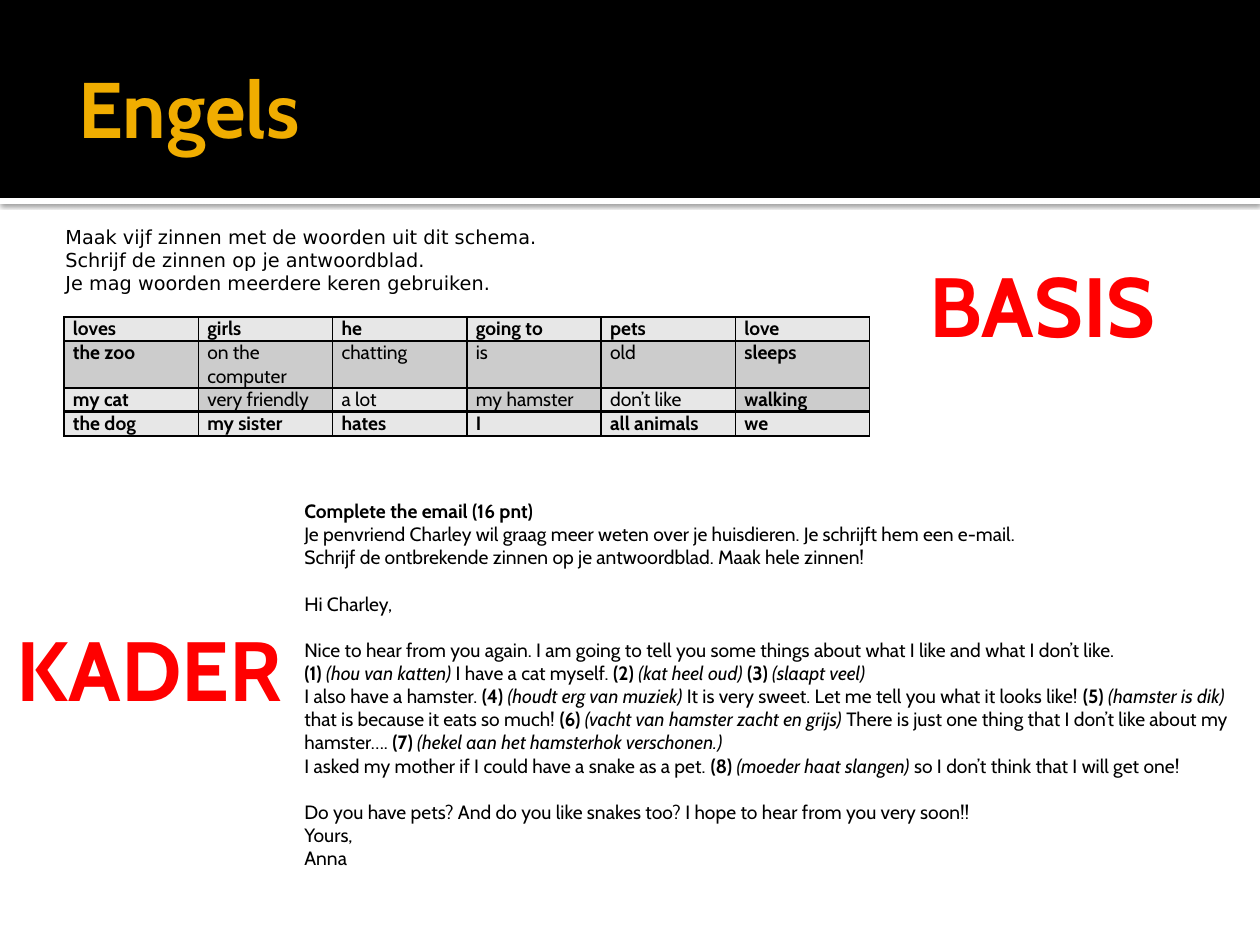
from lxml import etree
from pptx import Presentation
from pptx import util as u
from pptx.dml.color import RGBColor
from pptx.enum import shapes, text
from pptx.oxml import ns

PX_PER_INCH = 126
FONT = "Cabin"
BLACK, WHITE, RED, GOLD = "000000", "FFFFFF", "FF0000", "F0AD00"
LIGHT, DARK = "E7E7E7", "CCCCCC"
BODY_SIZE = 11
BLANK_LINE = 13.3

INSTRUCTIONS = [
    "Maak vijf zinnen met de woorden uit dit schema.",
    "Schrijf de zinnen op je antwoordblad.",
    "Je mag woorden meerdere keren gebruiken.",
]

# *bold* and _italic_ mark the spans
WORDS = [
    ["*loves*", "*girls*", "*he*", "*going to*", "*pets*", "*love*"],
    ["*the zoo*", "on the computer", "chatting", "is", "old", "*sleeps*"],
    ["*my cat*", "very friendly", "a lot", "my hamster", "don’t like", "*walking*"],
    ["*the dog*", "*my sister*", "*hates*", "*I*", "*all animals*", "*we*"],
]
ROW_FILLS = [[LIGHT] * 6, [DARK] * 6, [LIGHT, DARK] * 3, [LIGHT] * 6]
ROW_HEIGHTS = [24, 47, 24, 24]

# Each block of the e-mail is set apart by one blank line
EMAIL = [
    [
        "*Complete the email (16 pnt)*",
        "Je penvriend Charley wil graag meer weten over je huisdieren. "
        "Je schrijft hem een e-mail.",
        "Schrijf de ontbrekende zinnen op je antwoordblad. Maak hele zinnen!",
    ],
    ["Hi Charley,"],
    [
        "Nice to hear from you again. I am going to tell you some things "
        "about what I like and what I don’t like.",
        "*(1)*_ (hou van katten) _I have a cat myself. *(2) *_(kat heel oud) _"
        "*(3)*_ (slaapt veel)_",
        "I also have a hamster. *(4) *_(houdt erg van muziek) _It is very sweet. "
        "Let me tell you what it looks like! *(5) *_(hamster is dik) _"
        "that is because it eats so much! *(6) *_(vacht van hamster zacht en grijs) _"
        "There is just one thing that I don’t like about my hamster…. "
        "*(7) *_(hekel aan het hamsterhok verschonen.)_",
        "I asked my mother if I could have a snake as a pet. "
        "*(8)*_ (moeder haat slangen) _so I don’t think that I will get one!",
    ],
    [
        "Do you have pets? And do you like snakes too? "
        "I hope to hear from you very soon!!",
        "Yours,",
        "Anna",
    ],
]


def px(length):
    return u.Emu(round(length * u.Inches(1) / PX_PER_INCH))


def color(value):
    return RGBColor.from_string(value)


def write(frame, blocks, size=BODY_SIZE, font=FONT, ink=BLACK):
    """Fill a text frame with blocks of marked lines, a blank line apart."""
    para = None
    for number, block in enumerate(blocks):
        for index, line in enumerate(block):
            para = frame.add_paragraph() if para else frame.paragraphs[0]
            if number and not index:
                para.space_before = u.Pt(BLANK_LINE)
            for b, part in enumerate(line.split("*")):
                for i, words in enumerate(part.split("_")):
                    if words:
                        span = para.add_run()
                        span.text = words
                        span.font.size = u.Pt(size)
                        span.font.name = font
                        span.font.bold = b % 2 == 1
                        span.font.italic = i % 2 == 1
                        span.font.color.rgb = color(ink)


def add_text(page, at, blocks, anchor=text.MSO_ANCHOR.TOP, **style):
    box = page.shapes.add_textbox(*map(px, at))
    box.text_frame.word_wrap = True
    box.text_frame.vertical_anchor = anchor
    write(box.text_frame, blocks, **style)


def add_bar(page, at, fill):
    bar = page.shapes.add_shape(shapes.MSO_SHAPE.RECTANGLE, *map(px, at))
    bar.shadow.inherit = False
    bar.fill.solid()
    bar.fill.fore_color.rgb = color(fill)
    bar.line.fill.background()
    return bar


def add_shadow(bar):
    effects = bar._element.spPr.find(ns.qn("a:effectLst"))
    shadow = etree.SubElement(effects, ns.qn("a:outerShdw"), blurRad=str(u.Pt(2.5)),
                              dist=str(u.Pt(0.8)), dir="5400000", rotWithShape="0")
    tone = etree.SubElement(shadow, ns.qn("a:srgbClr"), val=BLACK)
    etree.SubElement(tone, ns.qn("a:alpha"), val="60000")


def add_borders(cell, **widths):
    """Draw black cell borders; widths in points by side: L, R, T, B."""
    props = cell._tc.get_or_add_tcPr()
    for side, width in widths.items():
        line = etree.SubElement(props, ns.qn(f"a:ln{side}"), w=str(u.Pt(width)))
        fill = etree.SubElement(line, ns.qn("a:solidFill"))
        etree.SubElement(fill, ns.qn("a:srgbClr"), val=BLACK)


def add_word_table(page, at):
    table = page.shapes.add_table(len(WORDS), len(WORDS[0]), *map(px, at)).table
    last = len(WORDS) - 1
    for r, row in enumerate(WORDS):
        table.rows[r].height = px(ROW_HEIGHTS[r])
        for c, words in enumerate(row):
            cell = table.cell(r, c)
            cell.margin_left = cell.margin_right = px(9)
            cell.margin_top = cell.margin_bottom = 0
            add_borders(cell, L=1, R=1, T=2 if r == last else 1,
                        B=2 if r == last - 1 else 1)
            cell.fill.solid()
            cell.fill.fore_color.rgb = color(ROW_FILLS[r][c])
            write(cell.text_frame, [[words]])


def main():
    deck = Presentation()
    deck.slide_width, deck.slide_height = px(1260), px(945)
    page = deck.slides.add_slide(deck.slide_layouts[6])

    add_shadow(add_bar(page, (0, 198, 1260, 6), WHITE))
    add_bar(page, (0, 0, 1260, 198), BLACK)
    add_text(page, (66, 21, 1131, 173), [["*Engels*"]],
             anchor=text.MSO_ANCHOR.MIDDLE, size=45, ink=GOLD)
    add_word_table(page, (64, 317, 806, sum(ROW_HEIGHTS)))
    add_text(page, (53, 219, 1042, 82), [INSTRUCTIONS], font="DejaVu Sans")
    add_text(page, (292, 493, 973, 425), EMAIL)
    add_text(page, (917, 247, 258, 115), [["*BASIS*"]], size=48, ink=RED)
    add_text(page, (4, 611, 307, 115), [["*KADER*"]], size=48, ink=RED)

    deck.save("out.pptx")


if __name__ == "__main__":
    main()
